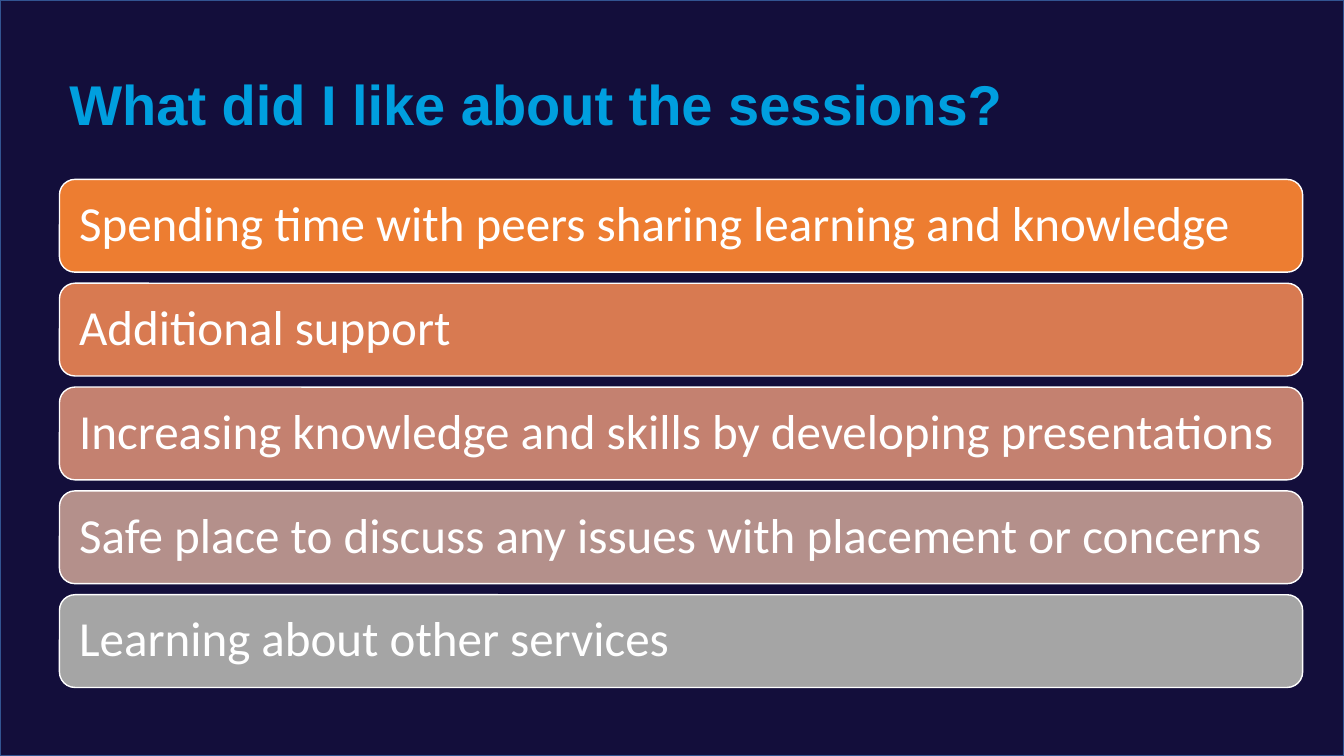
from pptx import Presentation
from pptx.dml.color import RGBColor
from pptx.enum.shapes import MSO_SHAPE
from pptx.enum.text import MSO_ANCHOR, PP_ALIGN
from pptx.util import Inches, Pt

RECTANGLE = MSO_SHAPE.RECTANGLE
ROUNDED = MSO_SHAPE.ROUNDED_RECTANGLE
MIDDLE, BOTTOM = MSO_ANCHOR.MIDDLE, MSO_ANCHOR.BOTTOM
LEFT = PP_ALIGN.LEFT

TITLE = "What did I like about the sessions?"
REASONS = [
    ("Spending time with peers sharing learning and knowledge", "orange"),
    ("Additional support", "copper"),
    ("Increasing knowledge and skills by developing presentations", "rose"),
    ("Safe place to discuss any issues with placement or concerns", "mauve"),
    ("Learning about other services", "grey"),
]
COLORS = {
    "navy": "130E3B",
    "edge": "325491",
    "title": "009FDF",
    "white": "FFFFFF",
    "orange": "ED7D31",
    "copper": "D87A51",
    "rose": "C48170",
    "mauve": "B4908B",
    "grey": "A5A5A5",
}
SLIDE_WIDTH, SLIDE_HEIGHT = 13.33, 7.5
MARGIN = 0.59
BAR_TOP, BAR_WIDTH, BAR_HEIGHT, BAR_GAP = 1.78, 12.33, 0.92, 0.11


def color(name):
    return RGBColor.from_string(COLORS[name])


def add_panel(page, kind, area, fill, line):
    panel = page.shapes.add_shape(kind, *map(Inches, area))
    panel.shadow.inherit = False
    panel.fill.solid()
    panel.fill.fore_color.rgb = color(fill)
    panel.line.color.rgb = color(line)
    panel.line.width = Pt(1)
    return panel


def write(box, text, font, size, ink, anchor, inset_x, inset_y, bold=False):
    frame = box.text_frame
    frame.word_wrap = True
    frame.vertical_anchor = anchor
    frame.margin_left = frame.margin_right = Inches(inset_x)
    frame.margin_top = frame.margin_bottom = Inches(inset_y)
    para = frame.paragraphs[0]
    para.alignment = LEFT
    para.line_spacing = 0.9
    span = para.add_run()
    span.text = text
    span.font.name = font
    span.font.size = Pt(size)
    span.font.bold = bold
    span.font.color.rgb = color(ink)


def main():
    deck = Presentation()
    deck.slide_width = Inches(SLIDE_WIDTH)
    deck.slide_height = Inches(SLIDE_HEIGHT)
    page = deck.slides.add_slide(deck.slide_layouts[6])

    add_panel(page, RECTANGLE, (0, 0, SLIDE_WIDTH, SLIDE_HEIGHT), "navy", "edge")

    title_area = (MARGIN, 0.57, 10.16, 0.84)
    title = page.shapes.add_textbox(*map(Inches, title_area))
    write(title, TITLE, "Arial", 40, "title", BOTTOM, 0.1, 0.05, bold=True)

    for index, (reason, fill) in enumerate(REASONS):
        top = BAR_TOP + index * (BAR_HEIGHT + BAR_GAP)
        bar = add_panel(page, ROUNDED, (MARGIN, top, BAR_WIDTH, BAR_HEIGHT), fill, "white")
        write(bar, reason, "Calibri", 35, "white", MIDDLE, 0.15, 0.15)

    deck.save("out.pptx")


if __name__ == "__main__":
    main()
